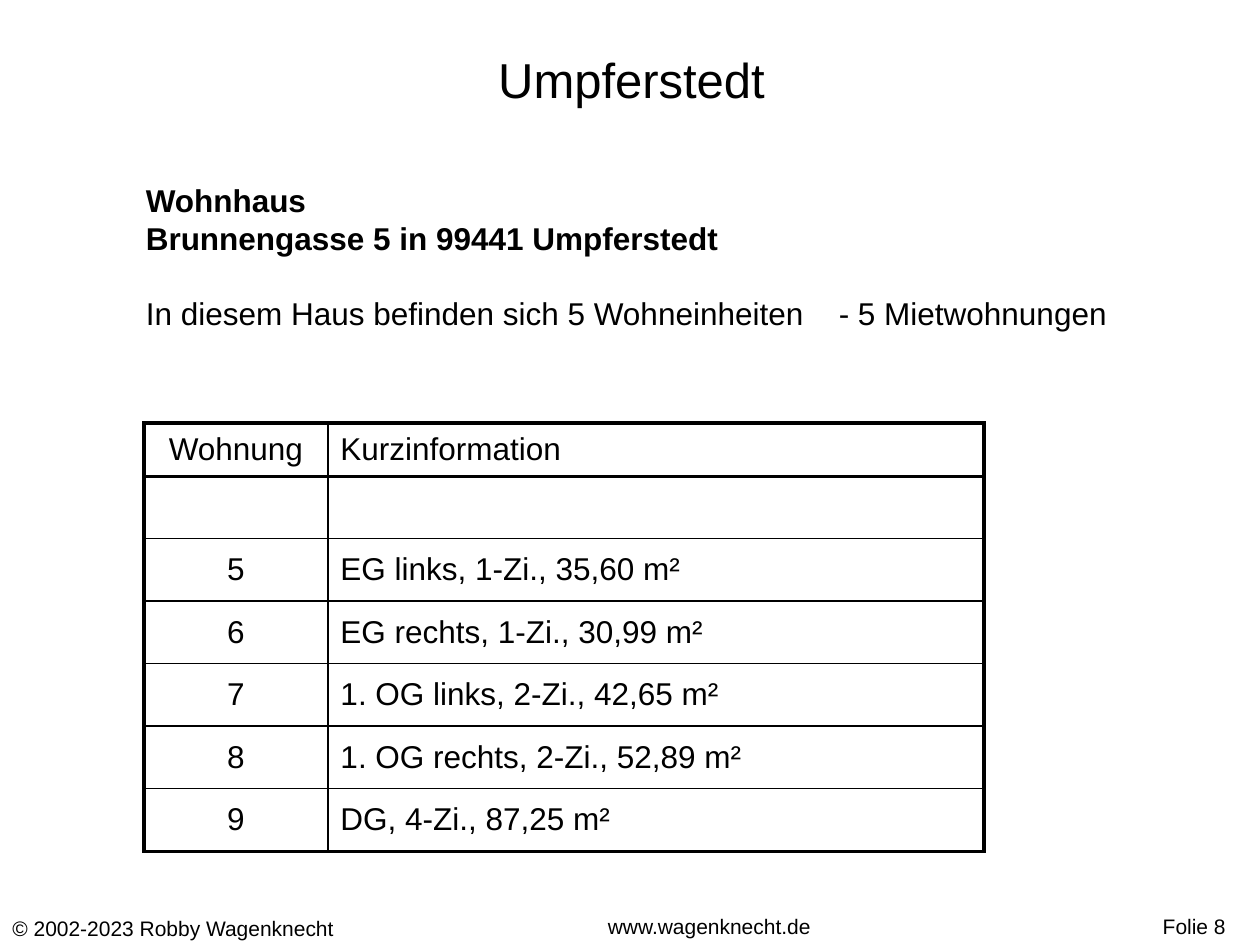
from lxml import etree
from pptx import Presentation
from pptx.dml.color import RGBColor
from pptx.enum.text import MSO_ANCHOR, PP_ALIGN
from pptx.oxml.ns import qn
from pptx.util import Cm, Pt

LEFT, MID = PP_ALIGN.LEFT, PP_ALIGN.CENTER
CENTER = MSO_ANCHOR.MIDDLE
BLACK = "000000"
THIN, THICK = Pt(1), Pt(2.25)


def style(par, size, align=LEFT, bold=False):
    par.alignment = align
    font = par.font
    font.name, font.size, font.bold = "Arial", Pt(size), bold
    font.color.rgb = RGBColor.from_string(BLACK)


def edge(cell, side, width):
    line = etree.SubElement(cell._tc.get_or_add_tcPr(), qn("a:ln" + side), w=str(width))
    fill = etree.SubElement(line, qn("a:solidFill"))
    etree.SubElement(fill, qn("a:srgbClr"), val=BLACK)


prs = Presentation()
prs.slide_width, prs.slide_height = Cm(25.4), Cm(19.05)
slide = prs.slides.add_slide(prs.slide_layouts[5])

# Title
title = slide.shapes.title
title.left, title.top, title.width, title.height = Cm(1.3), Cm(0), Cm(22.86), Cm(3.18)
title.text_frame.text = "Umpferstedt"
title.text_frame.vertical_anchor = CENTER
style(title.text_frame.paragraphs[0], 28, MID)

# Footer
for text, left, top, width, align in (
    ("© 2002-2023 Robby Wagenknecht", 0, 18.34, 9.7, LEFT),
    ("www.wagenknecht.de", 6.3, 18.29, 16, MID),
    ("Folie 8", 23.19, 18.29, 2.21, LEFT),
):
    box = slide.shapes.add_textbox(Cm(left), Cm(top), Cm(width), Cm(0.76))
    box.text_frame.word_wrap = True
    box.text_frame.text = text
    style(box.text_frame.paragraphs[0], 12, align)

# House address and summary
box = slide.shapes.add_textbox(Cm(2.69), Cm(3.53), Cm(22.71), Cm(3.3))
frame = box.text_frame
frame.word_wrap = True
frame.text = (
    "Wohnhaus\n"
    "Brunnengasse 5 in 99441 Umpferstedt\n"
    "In diesem Haus befinden sich 5 Wohneinheiten\t- 5 Mietwohnungen"
)
units = frame.paragraphs[2]
units.space_before = Pt(21.5)
tabs = etree.SubElement(units._p.get_or_add_pPr(), qn("a:tabLst"))
etree.SubElement(tabs, qn("a:tab"), pos=str(Cm(13.97)), algn="l")
for par in frame.paragraphs:
    style(par, 18, bold=par is not units)
style(units, 18)
for par in frame.paragraphs[:2]:
    par.font.bold = True
units.font.bold = False

# Table of flats
rows = (
    ("Wohnung", "Kurzinformation"),
    ("", ""),
    ("5", "EG links, 1-Zi., 35,60 m²"),
    ("6", "EG rechts, 1-Zi., 30,99 m²"),
    ("7", "1. OG links, 2-Zi., 42,65 m²"),
    ("8", "1. OG rechts, 2-Zi., 52,89 m²"),
    ("9", "DG, 4-Zi., 87,25 m²"),
)
last = len(rows) - 1
table = slide.shapes.add_table(
    len(rows), 2, Cm(2.9), Cm(8.53), Cm(16.94), Cm(8.63)
).table
table.first_row = table.horz_banding = False
table.columns[0].width, table.columns[1].width = Cm(3.71), Cm(13.23)
for r, row in enumerate(rows):
    table.rows[r].height = Cm(1.26 if r else 1.07)
    for c, text in enumerate(row):
        cell = table.cell(r, c)
        cell.text = text
        cell.vertical_anchor = CENTER
        style(cell.text_frame.paragraphs[0], 18, LEFT if c else MID)
        # Thick frame and header rule, thin inner lines
        edge(cell, "L", THIN if c else THICK)
        edge(cell, "R", THICK if c else THIN)
        edge(cell, "T", THICK if r < 2 else THIN)
        edge(cell, "B", THICK if r in (0, last) else THIN)
        cell.fill.background()

prs.save("out.pptx")
